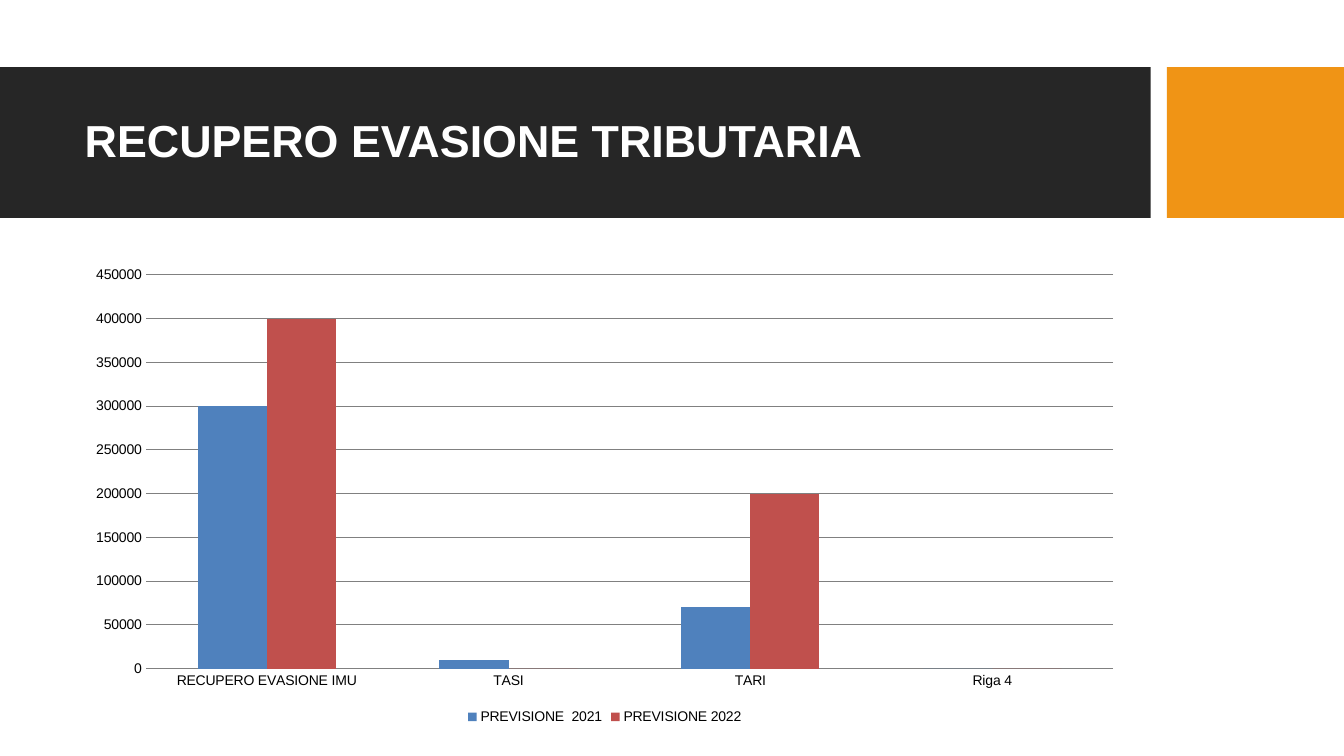
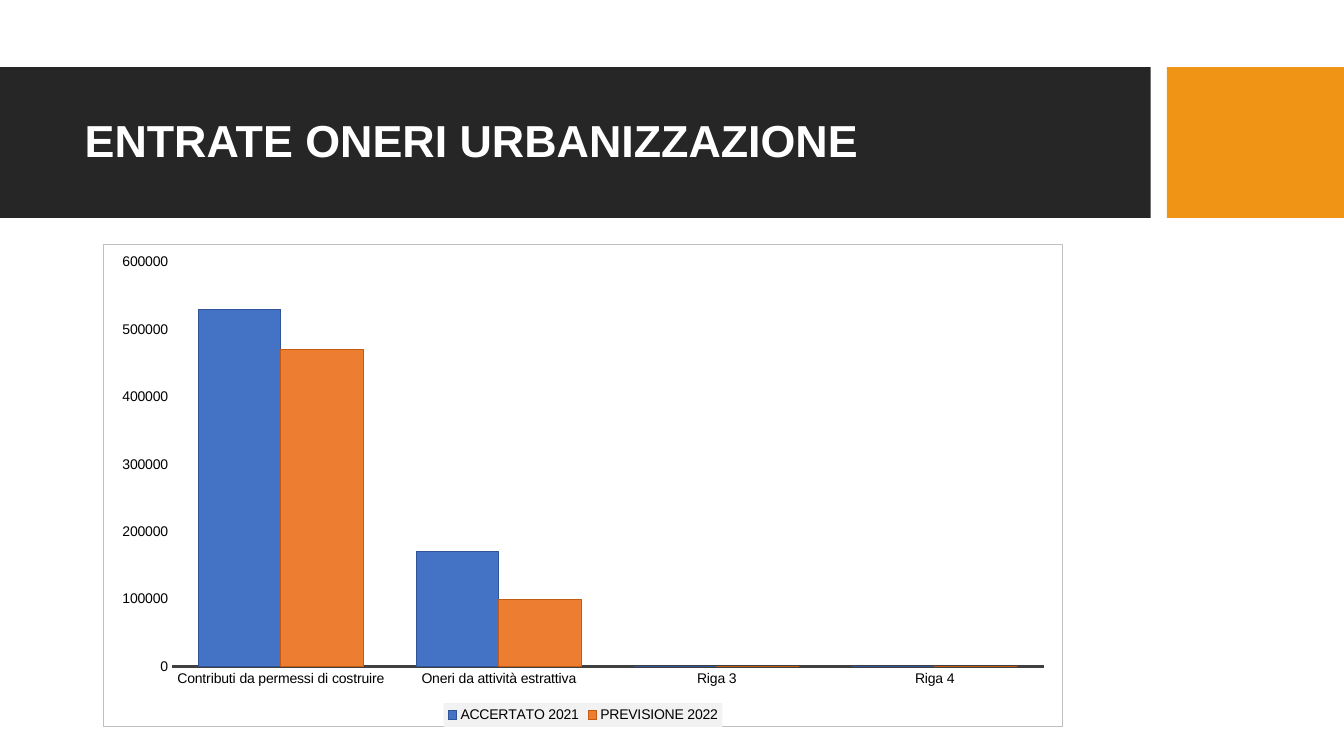
"""Two budget slides: a dark title band, an orange block and a column chart."""
import pptx
import pptx.chart.data
import pptx.dml.color
import pptx.enum.chart
import pptx.enum.shapes
import pptx.enum.text
import pptx.oxml
import pptx.oxml.ns
import pptx.util

Pt = pptx.util.Pt
rgb = pptx.dml.color.RGBColor.from_string
qn = pptx.oxml.ns.qn


class Theme:
    font = "Arial"
    title_size = Pt(32)
    chart_size = Pt(10)
    title_text = "FFFFFF"
    chart_text = "000000"
    band = "262626"
    accent = "F09415"
    grid = "808080"
    baseline = "404040"
    border = "BFBFBF"
    legend_fill = "F2F2F2"


def set_line(line, color, width):
    if color is None:
        line.fill.background()
    else:
        line.color.rgb = rgb(color)
        line.width = Pt(width)


def format_after(element, content):
    element.addnext(pptx.oxml.parse_xml(
        f'<c:spPr {pptx.oxml.ns.nsdecls("c", "a")}>{content}</c:spPr>'))


bands = [(0, 822, Theme.band), (833.5, 126.5, Theme.accent)]

slides = [
    {
        "title": "RECUPERO EVASIONE TRIBUTARIA",
        "frame": (53.6, 184, 756.7, 336.6),
        "categories": ["RECUPERO EVASIONE IMU", "TASI", "TARI", "Riga 4"],
        "series": [
            ("PREVISIONE  2021", (300000, 10000, 70000, None), "4F81BD", None),
            ("PREVISIONE 2022", (400000, 0, 200000, None), "C0504D", None),
        ],
        "gap": 150, "maximum": 450000, "step": 50000,
        "grid": True, "baseline": None, "framed": False,
    },
    {
        "title": "ENTRATE ONERI URBANIZZAZIONE",
        "frame": (73.4, 174.4, 686.2, 345.2),
        "categories": ["Contributi da permessi di costruire",
                       "Oneri da attività estrattiva", "Riga 3", "Riga 4"],
        "series": [
            ("ACCERTATO 2021", (530000, 170000, None, None), "4472C4", "2F5597"),
            ("PREVISIONE 2022", (470000, 100000, None, None), "ED7D31", "C55A11"),
        ],
        "gap": 65, "maximum": 600000, "step": 100000,
        "grid": False, "baseline": Theme.baseline, "framed": True,
    },
]

deck = pptx.Presentation()
deck.slide_width, deck.slide_height = Pt(960), Pt(540)

for content in slides:
    slide = deck.slides.add_slide(deck.slide_layouts[6])

    for left, width, color in bands:
        band = slide.shapes.add_shape(
            pptx.enum.shapes.MSO_SHAPE.RECTANGLE, Pt(left), Pt(48), Pt(width), Pt(107.6))
        band.shadow.inherit = False
        band.fill.solid()
        band.fill.fore_color.rgb = rgb(color)
        band.line.fill.background()

    title = slide.shapes.add_textbox(Pt(53.4), Pt(59.5), Pt(756.7), Pt(85)).text_frame
    title.word_wrap = True
    title.vertical_anchor = pptx.enum.text.MSO_ANCHOR.MIDDLE
    heading = title.paragraphs[0]
    heading.text = content["title"]
    heading.line_spacing = 0.9
    heading.font.name = Theme.font
    heading.font.size = Theme.title_size
    heading.font.bold = True
    heading.font.color.rgb = rgb(Theme.title_text)

    figures = pptx.chart.data.CategoryChartData()
    figures.categories = content["categories"]
    for name, values, fill, outline in content["series"]:
        figures.add_series(name, values)
    chart = slide.shapes.add_chart(
        pptx.enum.chart.XL_CHART_TYPE.COLUMN_CLUSTERED,
        *map(Pt, content["frame"]), figures).chart
    chart.has_title = False
    chart.font.name = Theme.font
    chart.font.size = Theme.chart_size
    chart.font.color.rgb = rgb(Theme.chart_text)

    plot = chart.plots[0]
    plot.gap_width = content["gap"]
    plot.overlap = 0
    plot.vary_by_categories = False
    for columns, (name, values, fill, outline) in zip(plot.series, content["series"]):
        columns.format.fill.solid()
        columns.format.fill.fore_color.rgb = rgb(fill)
        set_line(columns.format.line, outline, 0.75)

    for axis in (chart.category_axis, chart.value_axis):
        axis.major_tick_mark = pptx.enum.chart.XL_TICK_MARK.NONE
        axis.minor_tick_mark = pptx.enum.chart.XL_TICK_MARK.NONE
    set_line(chart.category_axis.format.line, content["baseline"], 1.5)
    amounts = chart.value_axis
    set_line(amounts.format.line, None, 0)
    amounts.minimum_scale = 0
    amounts.maximum_scale = content["maximum"]
    amounts.major_unit = content["step"]
    amounts.has_major_gridlines = content["grid"]
    if content["grid"]:
        set_line(amounts.major_gridlines.format.line, Theme.grid, 0.75)

    chart.has_legend = True
    chart.legend.position = pptx.enum.chart.XL_LEGEND_POSITION.BOTTOM
    chart.legend.include_in_layout = False

    root = chart.element
    root.find(".//" + qn("c:dispBlanksAs")).set("val", "zero")
    if content["framed"]:
        format_after(
            root.find(qn("c:chart")),
            f'<a:noFill/><a:ln w="{Pt(0.75)}"><a:solidFill>'
            f'<a:srgbClr val="{Theme.border}"/></a:solidFill></a:ln>')
        format_after(
            root.find(".//" + qn("c:legend") + "/" + qn("c:overlay")),
            f'<a:solidFill><a:srgbClr val="{Theme.legend_fill}"/></a:solidFill>')

deck.save("out.pptx")
